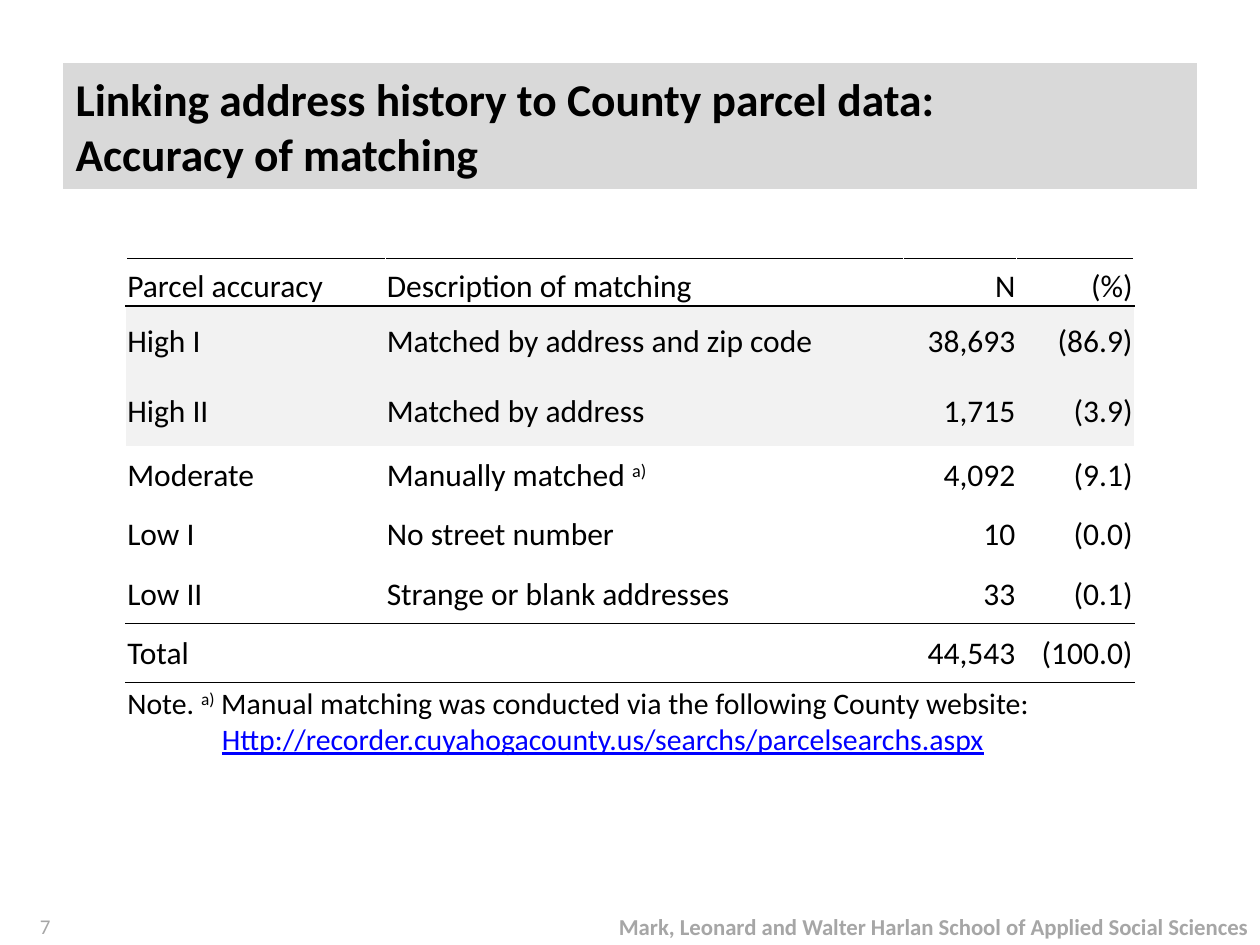
from lxml import etree
from pptx import Presentation
from pptx.dml.color import RGBColor
from pptx.enum import text
from pptx.oxml.ns import qn
from pptx.util import Pt

FONT = "Calibri"
TITLE = "Linking address history to County parcel data: \vAccuracy of matching"
FOOTER = "Mark, Leonard and Walter Harlan School of Applied Social Sciences"
PAGE_NUMBER = "7"

# A cell is a string, or a list of strings in which "a)" is raised.
MARK = "a)"
ROWS = [
    ["Parcel accuracy", "Description of matching", "N", "(%)"],
    ["High I", "Matched by address and zip code", "38,693", "(86.9)"],
    ["High II", "Matched by address", "1,715", "(3.9)"],
    ["Moderate", ["Manually matched ", MARK], "4,092", "(9.1)"],
    ["Low I", "No street number", "10", "(0.0)"],
    ["Low II", "Strange or blank addresses", "33", "(0.1)"],
    ["Total", "", "44,543", "(100.0)"],
]
NOTE = ["Note. ", MARK, " Manual matching was conducted via the following County website:"]
ADDRESS = "Http://recorder.cuyahogacounty.us/searchs/parcelsearchs.aspx"

COLUMN_WIDTHS = [148.3, 295.9, 64.8, 67]
ROW_HEIGHTS = [27.4, 39.8, 39.8, 33.9, 33.9, 33.9, 33.9, 44.6]
SHADED_ROWS = {1, 2}
WHITE_SIDED_ROWS = {0, 5, 6, 7}
RULES = {0, 1, 6, 7}  # a rule runs above each of these rows

LEFT, RIGHT = text.PP_ALIGN.LEFT, text.PP_ALIGN.RIGHT
MIDDLE, BOTTOM = text.MSO_ANCHOR.MIDDLE, text.MSO_ANCHOR.BOTTOM


def color(value):
    return RGBColor.from_string(value)


def write(paragraph, parts, size, align=LEFT, ink="000000", bold=False):
    paragraph.alignment = align
    for part in [parts] if isinstance(parts, str) else parts:
        run = paragraph.add_run()
        run.text = part
        style_run(run, size, ink, bold)
        if part == MARK:
            run.font._element.set("baseline", "30000")


def style_run(run, size, ink, bold):
    run.font.name = FONT
    run.font.size = Pt(size)
    run.font.bold = bold
    run.font.color.rgb = color(ink)


def add_label(slide, left, width, label, size, bold=False):
    box = slide.shapes.add_textbox(Pt(left), Pt(518.4), Pt(width), Pt(21.6))
    frame = box.text_frame
    frame.word_wrap = True
    frame.vertical_anchor = MIDDLE
    write(frame.paragraphs[0], label, size, RIGHT, "A6A6A6", bold)


def set_borders(cell, row):
    side = "FFFFFF" if row in WHITE_SIDED_ROWS else None
    top = "000000" if row in RULES else None
    bottom = "000000" if row + 1 in RULES else None
    properties = cell._tc.get_or_add_tcPr()
    edges = [("a:lnL", side), ("a:lnR", side), ("a:lnT", top), ("a:lnB", bottom)]
    for position, (tag, ink) in enumerate(edges):
        line = etree.Element(qn(tag), w=str(Pt(1)))
        if ink:
            fill = etree.SubElement(line, qn("a:solidFill"))
            etree.SubElement(fill, qn("a:srgbClr"), val=ink)
        else:
            etree.SubElement(line, qn("a:noFill"))
        properties.insert(position, line)


def format_cell(cell, row):
    cell.margin_left = cell.margin_right = cell.margin_top = Pt(0.75)
    cell.margin_bottom = 0
    cell.vertical_anchor = BOTTOM if row == 0 else MIDDLE
    if row in SHADED_ROWS:
        cell.fill.solid()
        cell.fill.fore_color.rgb = color("F2F2F2")
    else:
        cell.fill.background()
    set_borders(cell, row)


def add_title(slide):
    title = slide.shapes.title
    title.left, title.top, title.width, title.height = Pt(36), Pt(36), Pt(648), Pt(72)
    title.fill.solid()
    title.fill.fore_color.rgb = color("D9D9D9")
    frame = title.text_frame
    frame.text = TITLE
    frame.auto_size = text.MSO_AUTO_SIZE.NONE
    frame.vertical_anchor = MIDDLE
    paragraph = frame.paragraphs[0]
    paragraph.alignment = LEFT
    for run in paragraph.runs:
        style_run(run, 26, "000000", True)


def add_matching_table(slide):
    frame = slide.shapes.add_table(len(ROW_HEIGHTS), len(COLUMN_WIDTHS), Pt(72), Pt(147.6),
                                   Pt(sum(COLUMN_WIDTHS)), Pt(sum(ROW_HEIGHTS)))
    table = frame.table
    table.first_row = table.horz_banding = False
    for column, width in zip(table.columns, COLUMN_WIDTHS):
        column.width = Pt(width)
    for row, height in enumerate(ROW_HEIGHTS):
        table.rows[row].height = Pt(height)
        for column in range(len(COLUMN_WIDTHS)):
            format_cell(table.cell(row, column), row)

    for row, values in enumerate(ROWS):
        for column, value in enumerate(values):
            paragraph = table.cell(row, column).text_frame.paragraphs[0]
            if value:
                write(paragraph, value, 18, RIGHT if column > 1 else LEFT)
            else:
                paragraph.font.size = Pt(18)

    note = table.cell(len(ROWS), 0)
    note.merge(table.cell(len(ROWS), len(COLUMN_WIDTHS) - 1))
    write(note.text_frame.paragraphs[0], NOTE, 17)
    address = note.text_frame.add_paragraph()
    write(address, ADDRESS, 17, ink="0000FF")
    address.runs[0].font.underline = True
    address._p.get_or_add_pPr().set("marL", str(Pt(54)))


def main():
    presentation = Presentation()
    presentation.slide_width, presentation.slide_height = Pt(720), Pt(540)
    slide = presentation.slides.add_slide(presentation.slide_layouts[5])
    add_label(slide, 288, 432, FOOTER, 13, bold=True)
    add_label(slide, 0, 36, PAGE_NUMBER, 12)
    add_title(slide)
    add_matching_table(slide)
    presentation.save("out.pptx")


if __name__ == "__main__":
    main()
